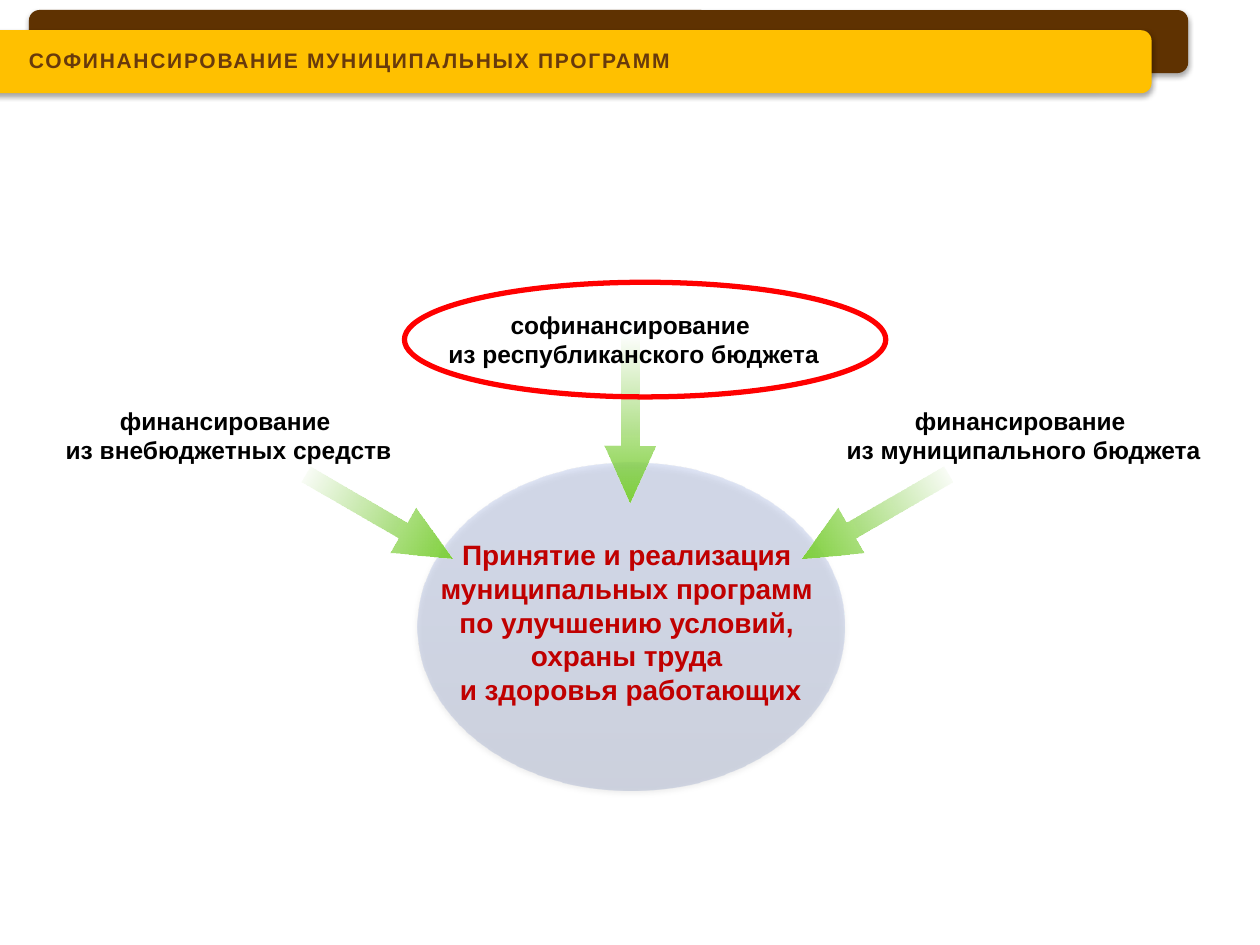
from pptx import Presentation
from pptx.dml.color import RGBColor
from pptx.enum.shapes import MSO_SHAPE
from pptx.enum.text import MSO_ANCHOR, MSO_AUTO_SIZE, PP_ALIGN
from pptx.oxml import parse_xml
from pptx.oxml.ns import nsdecls
from pptx.util import Inches, Pt

DARK_BROWN, AMBER, TITLE_BROWN = "5F3201", "FFC000", "683A0C"
DARK_RED, RED, BLACK = "C00000", "FF0000", "000000"
# Gradient stops: position %, colour, opacity %
GOAL_STOPS = [(0, "4C639F", 20), (80, "6380CE", 20), (100, "6180D1", 20)]
ARROW_STOPS = [(0, "79C738", 0), (100, "7FD13B", 100)]


def rgb(color):
    return RGBColor.from_string(color)


def add_plain_shape(slide, kind, box, fill=None, line=None, line_width=3):
    shape = slide.shapes.add_shape(kind, *map(Inches, box))
    shape.shadow.inherit = False
    if fill:
        shape.fill.solid()
        shape.fill.fore_color.rgb = rgb(fill)
    else:
        shape.fill.background()
    if line:
        shape.line.color.rgb = rgb(line)
        shape.line.width = Pt(line_width)
    else:
        shape.line.fill.background()
    return shape


def set_gradient(shape, stops, angle):
    stop_xml = "".join(
        f'<a:gs pos="{position * 1000}"><a:srgbClr val="{color}">'
        f'<a:alpha val="{opacity * 1000}"/></a:srgbClr></a:gs>'
        for position, color, opacity in stops)
    properties = shape._element.spPr
    properties.remove(properties.find("{*}noFill"))
    properties.prstGeom.addnext(parse_xml(
        f'<a:gradFill {nsdecls("a")} rotWithShape="1"><a:gsLst>{stop_xml}</a:gsLst>'
        f'<a:lin ang="{angle * 60000}" scaled="0"/></a:gradFill>'))


def add_shadow(shape):
    effects = shape._element.spPr.find("{*}effectLst")
    effects.append(parse_xml(
        f'<a:outerShdw {nsdecls("a")} blurRad="{Pt(3.1)}" dist="{Pt(1.8)}" '
        'dir="5400000" rotWithShape="0"><a:srgbClr val="000000">'
        '<a:alpha val="35000"/></a:srgbClr></a:outerShdw>'))


def write_text(shape, text, size=14, color=BLACK, align=PP_ALIGN.CENTER,
               wrap=True, spacing=None, auto_size=MSO_AUTO_SIZE.SHAPE_TO_FIT_TEXT):
    frame = shape.text_frame
    frame.word_wrap = wrap
    frame.auto_size = auto_size
    frame.vertical_anchor = MSO_ANCHOR.TOP
    paragraph = frame.paragraphs[0]
    paragraph.text = text
    paragraph.alignment = align
    for run in paragraph.runs:
        run.font.name = "Arial"
        run.font.size = Pt(size)
        run.font.bold = True
        run.font.color.rgb = rgb(color)
        if spacing is not None:
            run._r.get_or_add_rPr().set("spc", str(spacing * 100))


def add_header(slide, left, top, width):
    # Two overlapping bars, the amber one in front
    bar_height = 0.5
    for box, color in [
            ((left + 0.4, top, width - 0.4, bar_height), DARK_BROWN),
            ((left, top + 0.16, width - 0.29, bar_height), AMBER)]:
        add_shadow(add_plain_shape(slide, MSO_SHAPE.ROUNDED_RECTANGLE, box, color))

    # Title, brought in front of the bars
    title = slide.shapes.title
    title.left, title.top = Inches(left + 0.3), Inches(top + 0.25)
    title.width, title.height = Inches(8.99), Inches(0.51)
    write_text(title, "СОФИНАНСИРОВАНИЕ МУНИЦИПАЛЬНЫХ ПРОГРАММ", size=12,
               color=TITLE_BROWN, align=PP_ALIGN.LEFT, spacing=1,
               auto_size=MSO_AUTO_SIZE.NONE)
    frame = title.text_frame
    frame.margin_left = frame.margin_right = Inches(0.1)
    frame.margin_top, frame.margin_bottom = Inches(0.05), 0
    slide.shapes._spTree.append(title._element)


def add_goal(slide, left, top, width, height):
    goal = add_plain_shape(slide, MSO_SHAPE.OVAL, (left, top, width, height))
    set_gradient(goal, GOAL_STOPS, 270)
    add_shadow(goal)
    caption = slide.shapes.add_textbox(
        Inches(left - 0.04), Inches(top + 0.55), Inches(width + 0.08), Inches(1.45))
    write_text(caption, "Принятие и реализация \nмуниципальных программ \n"
               "по улучшению условий, \nохраны труда \nи здоровья работающих",
               size=16, color=DARK_RED)


def add_source(slide, label, label_box, wrap, arrow_center, rotation):
    # Arrow fades in from the source towards the goal
    length, thickness = 1.34, 0.41
    center_x, center_y = arrow_center
    arrow = add_plain_shape(
        slide, MSO_SHAPE.RIGHT_ARROW,
        (center_x - length / 2, center_y - thickness / 2, length, thickness))
    arrow.adjustments[0], arrow.adjustments[1] = 0.352, 1.11
    arrow.rotation = rotation
    set_gradient(arrow, ARROW_STOPS, 0)

    caption = slide.shapes.add_textbox(*map(Inches, label_box))
    write_text(caption, label, wrap=wrap)


def main():
    presentation = Presentation()
    presentation.slide_width, presentation.slide_height = Inches(10), Inches(7.5)
    slide = presentation.slides.add_slide(presentation.slide_layouts[5])

    add_header(slide, -0.17, 0.08, 9.6)
    add_goal(slide, 3.31, 3.67, 3.39, 2.6)

    # Funding sources: label, label box, wrap, arrow centre, arrow rotation
    sources = [
        ("софинансирование \nиз республиканского бюджета",
         (3.45, 2.41, 3.16, 0.57), True, (5, 3.32), 90),
        ("финансирование \nиз муниципального бюджета",
         (6.61, 3.17, 3.03, 0.57), False, (6.94, 4.1), 150),
        ("финансирование \nиз внебюджетных средств",
         (0.41, 3.17, 2.81, 0.57), False, (3.01, 4.1), 30),
    ]
    for source in sources:
        add_source(slide, *source)

    # Highlight around the co-financing source
    add_plain_shape(slide, MSO_SHAPE.OVAL, (3.21, 2.24, 3.82, 0.91), line=RED)

    presentation.save("out.pptx")


if __name__ == "__main__":
    main()
